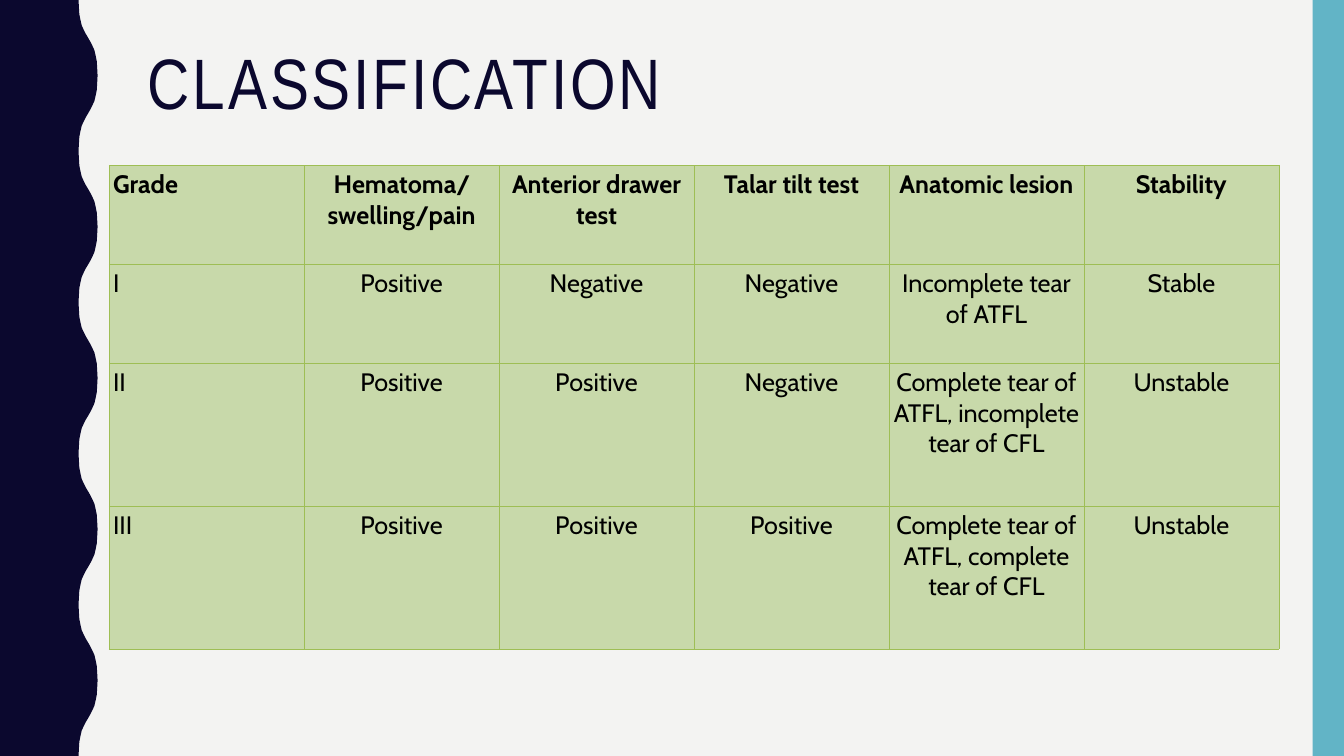
from dataclasses import dataclass

from lxml.etree import SubElement
from pptx import Presentation
from pptx.dml.color import RGBColor as Color
from pptx.enum.shapes import MSO_SHAPE as Shape
from pptx.enum.text import MSO_ANCHOR as Anchor, PP_ALIGN as Align
from pptx.oxml.ns import qn
from pptx.util import Cm, Pt

# Content
TITLE = "CLASSIFICATION"
GRADES = [
    ("Grade", "Hematoma/swelling/pain", "Anterior drawer test",
     "Talar tilt test", "Anatomic lesion", "Stability"),
    ("I", "Positive", "Negative", "Negative",
     "Incomplete tear of ATFL", "Stable"),
    ("II", "Positive", "Positive", "Negative",
     "Complete tear of ATFL, incomplete tear of CFL", "Unstable"),
    ("III", "Positive", "Positive", "Positive",
     "Complete tear of ATFL, complete tear of CFL", "Unstable"),
]


@dataclass(frozen=True)
class Theme:
    background: str = "F3F3F2"
    navy: str = "0B082E"
    teal: str = "62B4C6"
    cell: str = "C8D9AA"
    border: str = "9EBE55"
    text: str = "000000"
    title_font: str = "Arial Narrow"
    body_font: str = "Cabin"
    title_size: int = 51
    body_size: int = 18


THEME = Theme()

# Layout, in centimetres
WIDTH, HEIGHT = 33.87, 19.05
STRIP_WIDTH = 0.79
TABLE_LEFT, TABLE_TOP, TABLE_WIDTH = 2.75, 4.17, 29.48
ROW_HEIGHTS = (2.49, 2.49, 3.6, 3.6)
CELL_MARGIN = 0.1
WAVES = 5
WAVE_MIDDLE = 2.22
# Quarter wave from trough to middle: distance down, distance left of middle
QUARTER = [(0, 0.24), (0.19, 0.23), (0.36, 0.22), (0.51, 0.19),
           (0.64, 0.16), (0.75, 0.11), (0.85, 0.06), (0.95, 0)]


def paint(shape, color):
    shape.shadow.inherit = False
    shape.fill.solid()
    shape.fill.fore_color.rgb = Color.from_string(color)
    shape.line.fill.background()


def set_font(para, name, size, color, bold=False):
    font = para.font
    font.name, font.size, font.bold = name, Pt(size), bold
    font.color.rgb = Color.from_string(color)


def add_wave(page):
    period = HEIGHT / WAVES
    half = QUARTER + [(period / 2 - y, -x) for y, x in reversed(QUARTER[:-1])]
    wave = half + [(period - y, x) for y, x in reversed(half[:-1])]
    edge = [(Cm(WAVE_MIDDLE - x), Cm(number * period + y))
            for number in range(WAVES) for y, x in wave]
    builder = page.shapes.build_freeform(0, 0)
    builder.add_line_segments(edge + [(0, Cm(HEIGHT))], close=True)
    paint(builder.convert_to_shape(), THEME.navy)


def add_title(page):
    box = page.shapes.add_textbox(Cm(3.48), Cm(1.07), Cm(28.27), Cm(4.14))
    frame = box.text_frame
    frame.word_wrap = True
    frame.vertical_anchor = Anchor.TOP
    para = frame.paragraphs[0]
    para.line_spacing = 0.9
    set_font(para, THEME.title_font, THEME.title_size, THEME.navy)
    span = para.add_run()
    span.text = TITLE
    span.font.size = Pt(THEME.title_size)
    span._r.get_or_add_rPr().set("spc", "200")


def add_borders(cell):
    properties = cell._tc.get_or_add_tcPr()
    for side in ("a:lnL", "a:lnR", "a:lnT", "a:lnB"):
        line = SubElement(properties, qn(side), w=str(Pt(0.5)))
        fill = SubElement(line, qn("a:solidFill"))
        SubElement(fill, qn("a:srgbClr"), val=THEME.border)


def fill_cell(cell, text, heading, centred):
    cell.margin_left = cell.margin_right = Cm(CELL_MARGIN)
    cell.margin_top = cell.margin_bottom = Cm(CELL_MARGIN)
    add_borders(cell)
    cell.fill.solid()
    cell.fill.fore_color.rgb = Color.from_string(THEME.cell)
    cell.text = text
    para = cell.text_frame.paragraphs[0]
    para.alignment = Align.CENTER if centred else Align.LEFT
    set_font(para, THEME.body_font, THEME.body_size, THEME.text, heading)


def add_grades(page):
    columns = len(GRADES[0])
    table = page.shapes.add_table(
        len(GRADES), columns, Cm(TABLE_LEFT), Cm(TABLE_TOP),
        Cm(TABLE_WIDTH), Cm(sum(ROW_HEIGHTS))).table
    table.horz_banding = False
    for column in table.columns:
        column.width = Cm(TABLE_WIDTH / columns)
    for row, height in zip(table.rows, ROW_HEIGHTS):
        row.height = Cm(height)
    for r, grade in enumerate(GRADES):
        for c, text in enumerate(grade):
            fill_cell(table.cell(r, c), text, heading=r == 0, centred=c > 0)


def main():
    deck = Presentation()
    deck.slide_width, deck.slide_height = Cm(WIDTH), Cm(HEIGHT)
    page = deck.slides.add_slide(deck.slide_layouts[6])
    page.background.fill.solid()
    page.background.fill.fore_color.rgb = Color.from_string(THEME.background)

    # Side decorations
    add_wave(page)
    strip = page.shapes.add_shape(
        Shape.RECTANGLE, Cm(WIDTH - STRIP_WIDTH), 0, Cm(STRIP_WIDTH), Cm(HEIGHT))
    paint(strip, THEME.teal)

    # Title and table
    add_title(page)
    add_grades(page)
    deck.save("out.pptx")


if __name__ == "__main__":
    main()
